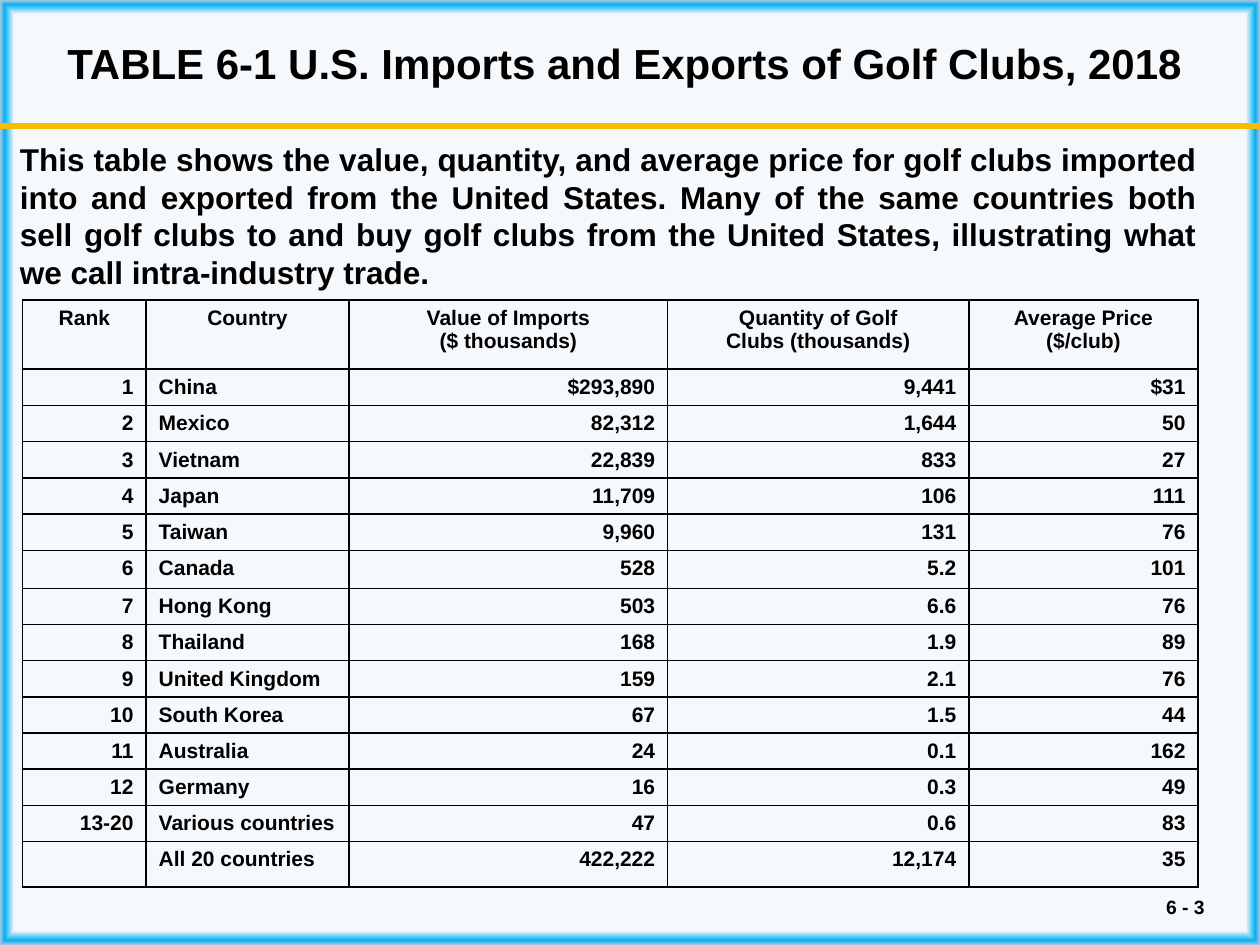
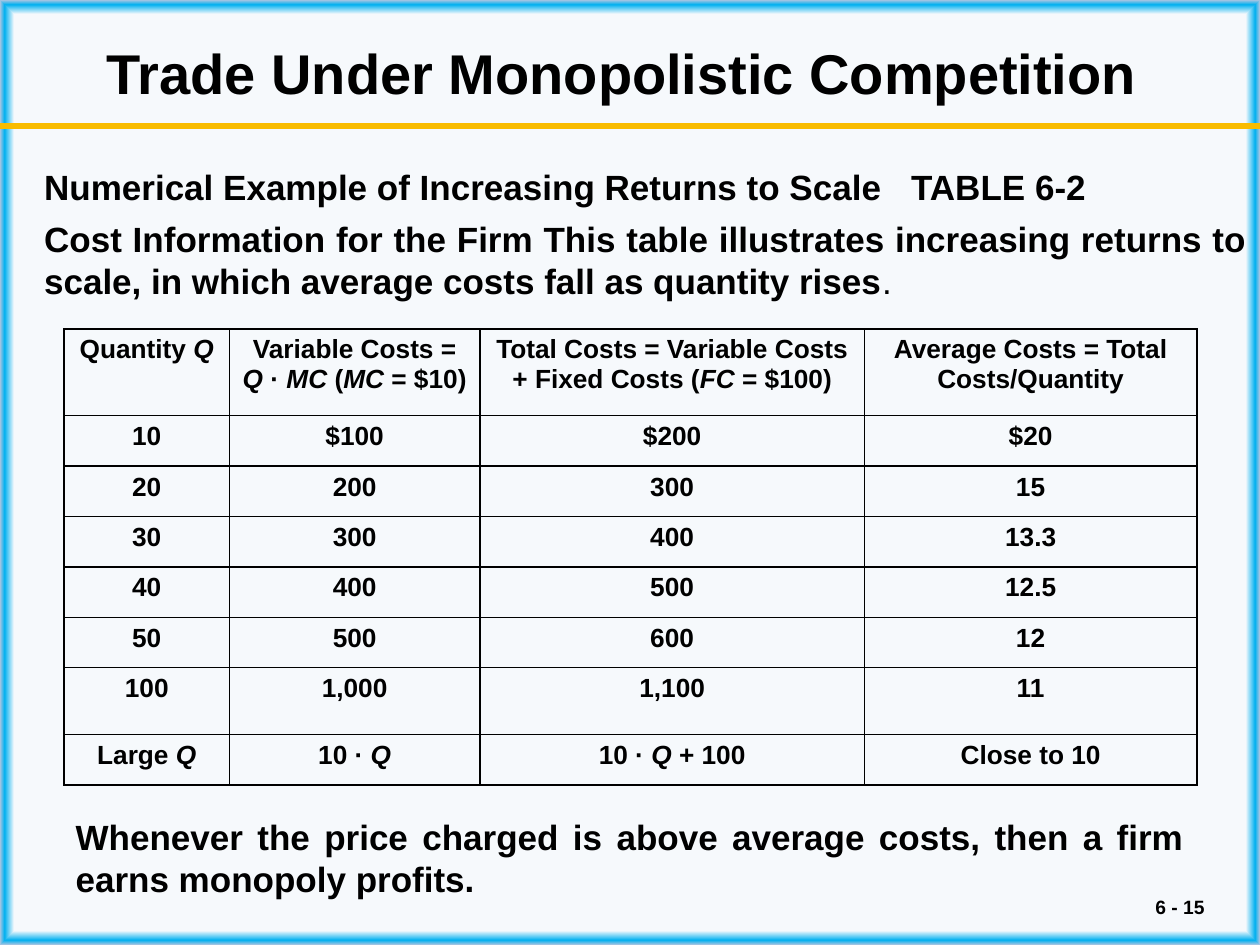
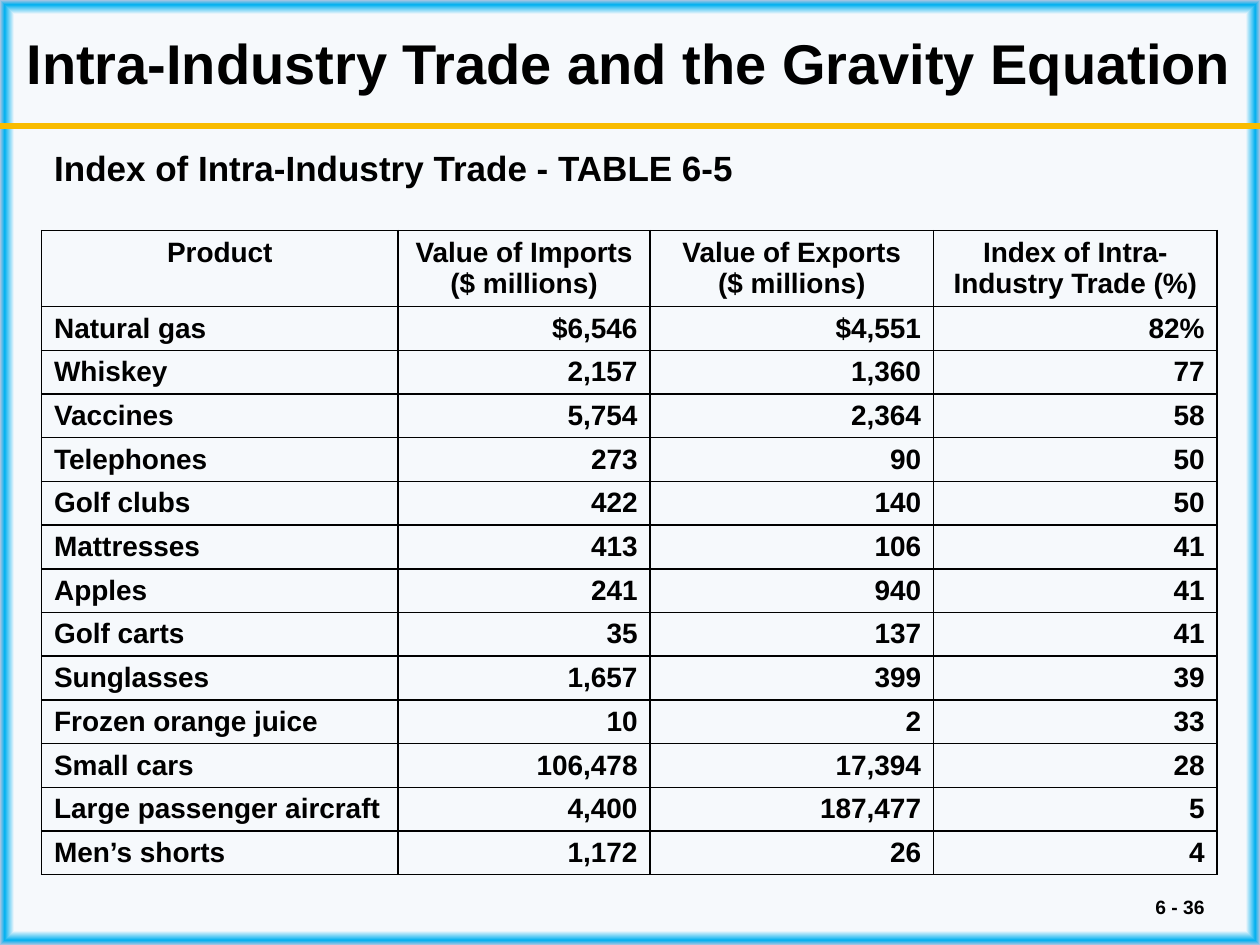
from pptx import Presentation
from pptx import util as u
from pptx.dml.color import RGBColor
from pptx.enum import shapes, text
from pptx.oxml import parse_xml
from pptx.oxml.ns import nsdecls, qn
from lxml import etree

COLORS = {"text": "000000", "band": "F9BC00", "border": "000000"}
BACKGROUND_STOPS = [(97, "F6F9FC"), (99, "00B0F0"), (100, "B0C6E1"), (100, "CAD9EB")]
FONT = "Arial"
LEFT, CENTER, RIGHT, JUSTIFY = (text.PP_ALIGN.LEFT, text.PP_ALIGN.CENTER,
                                text.PP_ALIGN.RIGHT, text.PP_ALIGN.JUSTIFY)


def style_run(run, size, bold=True, italic=False):
    run.font.name = FONT
    run.font.size = u.Pt(size)
    run.font.bold = bold
    run.font.italic = italic
    run.font.color.rgb = RGBColor.from_string(COLORS["text"])


def write(text_frame, content, size, alignment, before=0):
    """Write one paragraph per line; words between asterisks are italic."""
    text_frame.word_wrap = True
    for number, line in enumerate(content.split("\n")):
        paragraph = text_frame.add_paragraph() if number else text_frame.paragraphs[0]
        paragraph.alignment = alignment
        paragraph.space_before = u.Pt(before)
        for position, part in enumerate(line.split("*")):
            if part:
                run = paragraph.add_run()
                run.text = part
                style_run(run, size, italic=position % 2 == 1)
        # The paragraph end keeps the text size, so empty cells stay low
        etree.SubElement(paragraph._p, qn("a:endParaRPr"), sz=str(size * 100))


# Content of the slides
pages = [
    {
        "number": 3, "layout": 5,
        "title": "TABLE 6-1 U.S. Imports and Exports of Golf Clubs, 2018 ",
        "title_box": (0.17, 0.25, 9.67, 0.5), "title_size": 24,
        "title_anchor": text.MSO_ANCHOR.TOP,
        "bodies": [],
        "table_at": (0.18, 2.38), "table_size": 12,
        "columns": [0.98, 1.61, 2.53, 2.39, 1.82],
        "rows": [0.55] + [1.44 / 5] * 5 + [0.3] + [2.01 / 7] * 7 + [0.36],
        "alignments": [RIGHT, LEFT, RIGHT, RIGHT, RIGHT],
        "cells": [
            ["Rank", "Country", "Value of Imports\n($ thousands)",
             "Quantity of Golf\nClubs (thousands)", "Average Price\n($/club)"],
            ["1", "China", "$293,890", "9,441", "$31"],
            ["2", "Mexico", "82,312", "1,644", "50"],
            ["3", "Vietnam", "22,839", "833", "27"],
            ["4", "Japan", "11,709", "106", "111"],
            ["5", "Taiwan", "9,960", "131", "76"],
            ["6", "Canada", "528", "5.2", "101"],
            ["7", "Hong Kong", "503", "6.6", "76"],
            ["8", "Thailand", "168", "1.9", "89"],
            ["9", "United Kingdom", "159", "2.1", "76"],
            ["10", "South Korea", "67", "1.5", "44"],
            ["11", "Australia", "24", "0.1", "162"],
            ["12", "Germany", "16", "0.3", "49"],
            ["13-20", "Various countries", "47", "0.6", "83"],
            ["", "All 20 countries", "422,222", "12,174", "35"],
        ],
    },
    {
        "number": 15, "layout": 3,
        "title": "Trade Under Monopolistic Competition ",
        "title_box": (0.5, 0.07, 9, 1.01), "title_size": 32,
        "title_anchor": text.MSO_ANCHOR.MIDDLE,
        "bodies": [
            ((0.25, 1.26, 9.75, 2.17),
             "Numerical Example of Increasing Returns to Scale\n"
             "Cost Information for the Firm This table illustrates increasing returns "
             "to scale, in which average costs fall as quantity rises"),
            ((0.5, 6.42, 9, 0.77),
             "Whenever the price charged is above average costs, then a firm earns "
             "monopoly profits."),
        ],
        "table_at": (0.51, 2.61), "table_size": 15,
        "columns": [1.31, 1.99, 3.05, 2.64],
        "rows": [0.69] + [0.4] * 5 + [0.53, 0.4],
        "alignments": [CENTER] * 4,
        "cells": [
            ["Quantity *Q*", "Variable Costs =\n*Q* · *MC* (*MC* = $10)",
             "Total Costs = Variable Costs + Fixed Costs (*FC* = $100)",
             "Average Costs = Total Costs/Quantity"],
            ["10", "$100", "$200", "$20"],
            ["20", "200", "300", "15"],
            ["30", "300", "400", "13.3"],
            ["40", "400", "500", "12.5"],
            ["50", "500", "600", "12"],
            ["100", "1,000", "1,100", "11"],
            ["Large *Q*", "10 · *Q*", "10 · *Q* + 100", "Close to 10"],
        ],
    },
    {
        "number": 36, "layout": 1,
        "title": "Intra-Industry Trade and the Gravity Equation ",
        "title_box": (0.08, -0.13, 9.83, 1.25), "title_size": 32,
        "title_anchor": text.MSO_ANCHOR.MIDDLE,
        "bodies": [((0.33, 1.11, 9, 0.48), "Index of Intra-Industry Trade - TABLE 6-5")],
        "table_at": (0.33, 1.83), "table_size": 16,
        "columns": [2.83, 2, 2.25, 2.25],
        "rows": [0.6] + [4.51 / 13] * 13,
        "alignments": [LEFT, RIGHT, RIGHT, RIGHT],
        "cells": [
            ["Product", "Value of Imports\n($ millions)", "Value of Exports\n($ millions)",
             "Index of Intra-\nIndustry Trade (%)"],
            ["Natural gas", "$6,546", "$4,551", "82%"],
            ["Whiskey", "2,157", "1,360", "77"],
            ["Vaccines", "5,754", "2,364", "58"],
            ["Telephones", "273", "90", "50"],
            ["Golf clubs", "422", "140", "50"],
            ["Mattresses", "413", "106", "41"],
            ["Apples", "241", "940", "41"],
            ["Golf carts", "35", "137", "41"],
            ["Sunglasses", "1,657", "399", "39"],
            ["Frozen orange juice", "10", "2", "33"],
            ["Small cars", "106,478", "17,394", "28"],
            ["Large passenger aircraft", "4,400", "187,477", "5"],
            ["Men’s shorts", "1,172", "26", "4"],
        ],
    },
]

presentation = Presentation()
presentation.slide_width = u.Inches(10)
presentation.slide_height = u.Inches(7.5)

# Shared background: pale page with a glowing blue edge
master = presentation.slide_master
master.background.fill.gradient()
gradient = master.element.find(".//" + qn("a:gradFill"))
stops = "".join(f'<a:gs pos="{position * 1000}"><a:srgbClr val="{color}"/></a:gs>'
                for position, color in BACKGROUND_STOPS)
gradient.getparent().replace(gradient, parse_xml(
    f'<a:gradFill {nsdecls("a")} rotWithShape="1"><a:gsLst>{stops}</a:gsLst>'
    '<a:path path="shape"><a:fillToRect l="50000" t="50000" r="50000" b="50000"/></a:path>'
    '</a:gradFill>'))

for page in pages:
    slide = presentation.slides.add_slide(presentation.slide_layouts[page["layout"]])

    # Page number
    footer = slide.shapes.add_textbox(*map(u.Inches, (7.33, 7, 2.33, 0.4)))
    footer.text_frame.vertical_anchor = text.MSO_ANCHOR.MIDDLE
    write(footer.text_frame, f"6 - {page['number']}", 11, RIGHT)

    # Band under the title
    band = slide.shapes.add_connector(shapes.MSO_CONNECTOR.STRAIGHT, 0, u.Inches(1),
                                      u.Inches(10), u.Inches(1))
    band.line.color.rgb = RGBColor.from_string(COLORS["band"])
    band.line.width = u.Pt(3.5)
    etree.SubElement(band.element.spPr, qn("a:effectLst"))

    # Title
    title = slide.shapes.title
    title.left, title.top, title.width, title.height = map(u.Inches, page["title_box"])
    title.text_frame.auto_size = text.MSO_AUTO_SIZE.NONE
    title.text_frame.vertical_anchor = page["title_anchor"]
    write(title.text_frame, page["title"], page["title_size"], CENTER)

    # Body text without bullets
    for index, (box, content) in enumerate(page["bodies"], start=1):
        body = slide.placeholders[index]
        body.left, body.top, body.width, body.height = map(u.Inches, box)
        body.text_frame.auto_size = text.MSO_AUTO_SIZE.NONE
        write(body.text_frame, content, 20, JUSTIFY, before=6.2)
        for paragraph in body.text_frame.paragraphs:
            properties = paragraph._p.get_or_add_pPr()
            properties.set("marL", "0")
            properties.set("indent", "0")
            etree.SubElement(properties, qn("a:buNone"))

    # Table
    columns, rows = page["columns"], page["rows"]
    left, top = page["table_at"]
    table = slide.shapes.add_table(
        len(rows), len(columns), u.Inches(left), u.Inches(top),
        u.Inches(sum(columns)), u.Inches(sum(rows))).table
    table.first_row = table.horz_banding = False
    for column, width in zip(table.columns, columns):
        column.width = u.Inches(width)
    for row_number, (row, height) in enumerate(zip(table.rows, rows)):
        row.height = u.Inches(height)
        for column_number, cell in enumerate(row.cells):
            alignment = page["alignments"][column_number] if row_number else CENTER
            write(cell.text_frame, page["cells"][row_number][column_number],
                  page["table_size"], alignment)
            cell.margin_bottom = u.Inches(0.02)
            cell_properties = cell._tc.get_or_add_tcPr()
            for side in ("lnL", "lnR", "lnT", "lnB"):
                cell_properties.append(parse_xml(
                    f'<a:{side} {nsdecls("a")} w="{u.Pt(1)}"><a:solidFill>'
                    f'<a:srgbClr val="{COLORS["border"]}"/></a:solidFill></a:{side}>'))
            cell.fill.background()

# Introduction above the golf club table
golf_slide, cost_slide = presentation.slides[0], presentation.slides[1]
introduction = golf_slide.shapes.add_textbox(*map(u.Inches, (0.06, 1.06, 9.54, 1.31)))
write(introduction.text_frame,
      "This table shows the value, quantity, and average price for golf clubs imported "
      "into and exported from the United States. Many of the same countries both sell "
      "golf clubs to and buy golf clubs from the United States, illustrating what we "
      "call intra-industry trade.", 18, JUSTIFY)

# Widened space before the table number, and a light full stop
heading, description = cost_slide.placeholders[1].text_frame.paragraphs
for paragraph, content, bold in ((heading, " ", True), (heading, "TABLE 6-2", True),
                                 (description, ".", False)):
    run = paragraph.add_run()
    run.text = content
    style_run(run, 20, bold=bold)
    if content == " ":
        run.font._element.set("spc", "1100")

presentation.save("out.pptx")
